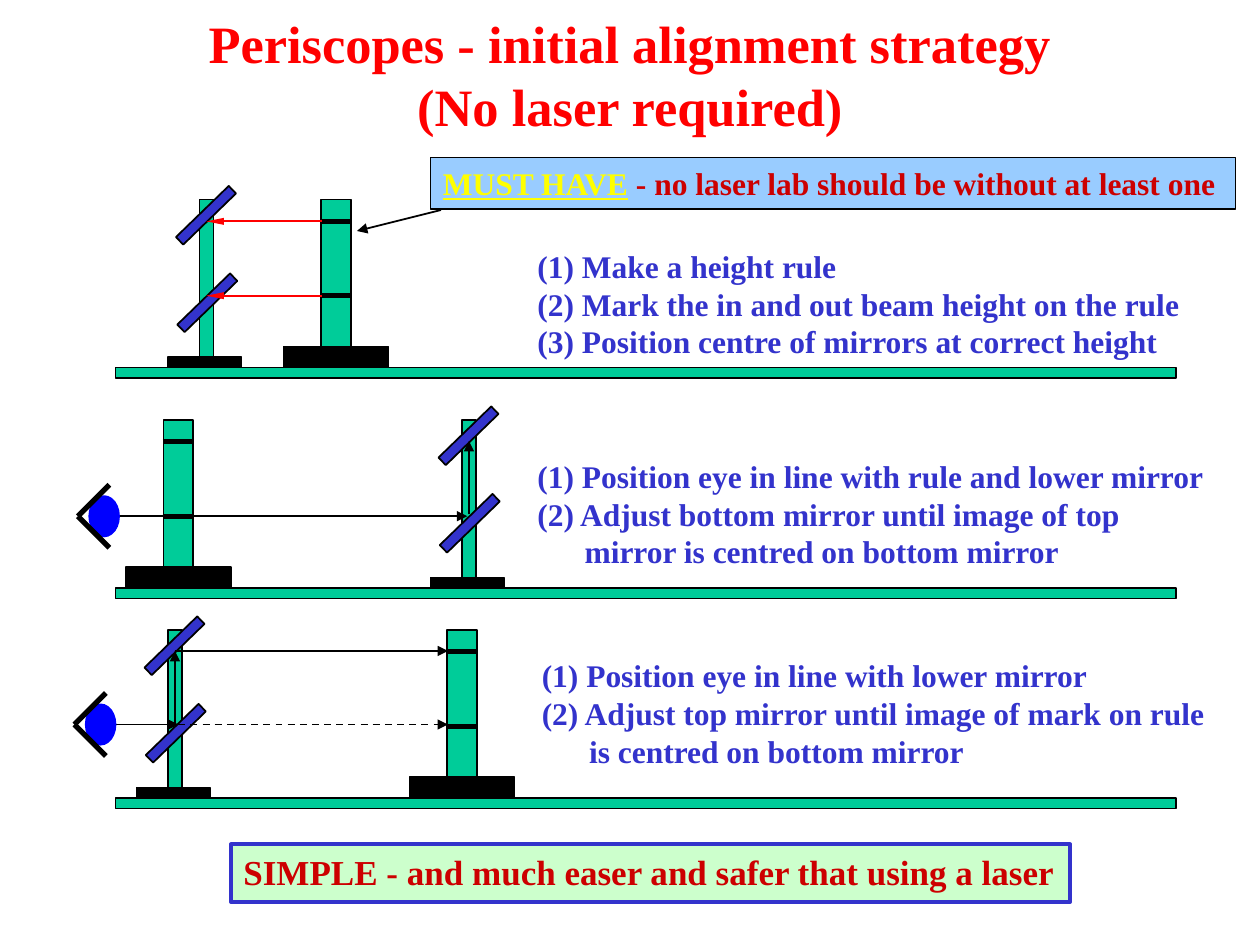
from dataclasses import dataclass

from lxml import etree
from pptx import Presentation
from pptx.dml.color import RGBColor
from pptx.enum.dml import MSO_LINE
from pptx.enum.shapes import MSO_CONNECTOR, MSO_SHAPE
from pptx.enum.text import MSO_ANCHOR, PP_ALIGN
from pptx.oxml.ns import qn
from pptx.util import Pt

RECT, OVAL = MSO_SHAPE.RECTANGLE, MSO_SHAPE.OVAL
LINE, DASH = MSO_CONNECTOR.STRAIGHT, MSO_LINE.DASH
LEFT, CENTER = PP_ALIGN.LEFT, PP_ALIGN.CENTER
TOP, MIDDLE = MSO_ANCHOR.TOP, MSO_ANCHOR.MIDDLE


@dataclass(frozen=True)
class Theme:
    font: str = "Times New Roman"
    black: str = "000000"
    red: str = "FF0000"
    dark: str = "CC0000"
    blue: str = "3333CC"
    eye: str = "0000FF"
    green: str = "00CC99"
    pale: str = "CCFFCC"
    sky: str = "99CCFF"
    yellow: str = "FFFF00"
    title: int = 30
    body: int = 18
    close: int = 20


class Sketch:
    UPPER, LOWER = 83.5, 41  # beam heights over the rail top

    def __init__(self, slide, theme):
        self.slide, self.theme = slide, theme

    def block(self, x, y, w, h, fill, line=None, weight=1, kind=RECT, turn=0, place=None):
        place = place or self.slide
        shape = place.shapes.add_shape(kind, Pt(x), Pt(y), Pt(w), Pt(h))
        shape.shadow.inherit = False
        shape.rotation = turn
        shape.fill.solid()
        shape.fill.fore_color.rgb = RGBColor.from_string(fill)
        if line:
            shape.line.color.rgb = RGBColor.from_string(line)
            shape.line.width = Pt(weight)
        else:
            shape.line.fill.background()
        return shape

    def stroke(self, x1, y1, x2, y2, color=None, weight=1, head=None, dash=None, place=None):
        """Draw a line; head holds the arrowhead's width and length."""
        place = place or self.slide
        line = place.shapes.add_connector(LINE, Pt(x1), Pt(y1), Pt(x2), Pt(y2))
        line.line.color.rgb = RGBColor.from_string(color or self.theme.black)
        line.line.width = Pt(weight)
        if dash:
            line.line.dash_style = dash
        props = line._element.spPr
        if head:
            etree.SubElement(props.find(qn("a:ln")), qn("a:tailEnd"),
                             type="triangle", w=head[0], len=head[1])
        etree.SubElement(props, qn("a:effectLst"))

    def ray(self, x1, y1, x2, y2, color=None, head=("med", "med"), dash=None):
        self.stroke(x1, y1, x2, y2, color, head=head, dash=dash)

    def letter(self, shape, lines, size, align=LEFT, anchor=TOP, wrap=False):
        """Fill a shape with lines, each an indent and a list of (text, color, underline)."""
        frame = shape.text_frame
        for name, value in {"word_wrap": wrap, "vertical_anchor": anchor}.items():
            setattr(frame, name, value)
        for i, (indent, runs) in enumerate(lines):
            para = frame.add_paragraph() if i else frame.paragraphs[0]
            para.alignment = align
            if indent:
                para._p.get_or_add_pPr().set("marL", str(int(Pt(indent))))
            for text, color, under in runs:
                run = para.add_run()
                run.text = text
                form = {"name": self.theme.font, "size": Pt(size), "bold": True, "underline": under}
                for name, value in form.items():
                    setattr(run.font, name, value)
                run.font.color.rgb = RGBColor.from_string(color)

    def label(self, x, y, w, h, lines, color, size, **form):
        box = self.slide.shapes.add_textbox(Pt(x), Pt(y), Pt(w), Pt(h))
        rows = [(indent, [(text, color, False)]) for indent, text in lines]
        self.letter(box, rows, size, **form)

    def steps(self, x, y, lines):
        self.label(x, y, 410, 72, lines, self.theme.blue, self.theme.body, wrap=True)

    def rail(self, y):
        self.block(66, y, 606, 6, self.theme.green, self.theme.black)

    def tower(self, x, rail):
        """Draw the post that carries both mirrors."""
        t = self.theme
        self.block(x + 18, rail - 96, 8, 90, t.green, t.black)
        for dx, rise in ((1.5, 40), (0.75, 90)):
            self.block(x + dx, rail - rise, 42, 6, t.blue, t.black, turn=315.9)
        self.block(x, rail - 6, 42, 6, t.black, t.black)

    def ruler(self, x, rail):
        t = self.theme
        self.block(x + 21.5, rail - 96, 17, 84, t.green, t.black)
        self.block(x, rail - 12, 60, 12, t.black, t.black)
        for rise in (self.UPPER, self.LOWER):
            self.stroke(x + 21, rail - rise, x + 39, rail - rise, weight=3)

    def eye(self, x, y):
        """Draw an eye whose lids meet at (x, y)."""
        group = self.slide.shapes.add_group_shape()
        self.block(x + 6, y - 12, 18, 24, self.theme.eye, kind=OVAL, place=group)
        for dy in (-18, 18):
            self.stroke(x, y, x + 18, y + dy, weight=3, place=group)


def main():
    deck = Presentation()
    deck.slide_width, deck.slide_height = Pt(720), Pt(540)
    t = Theme()
    s = Sketch(deck.slides.add_slide(deck.slide_layouts[6]), t)
    up, low = s.UPPER, s.LOWER

    s.label(0, 12, 720, 60, [(0, "Periscopes - initial alignment strategy"), (0, "(No laser required)")],
            t.red, t.title, align=CENTER, anchor=MIDDLE, wrap=True)

    # Rail top, mirror tower and ruler of each stage
    stages = ((210, 96, 162), (336, 246, 72), (456, 78, 234))
    for rail, tower, ruler in stages:
        s.rail(rail)
        s.tower(tower, rail)
        s.ruler(ruler, rail)
    first, second, third = (stage[0] for stage in stages)

    # Stage 1: set the mirror heights
    for rise in (up, low):
        s.ray(184, first - rise, 118, first - rise, t.red, ("sm", "lg"))
    s.steps(300, 137.5, [(0, "(1) Make a height rule"),
                         (0, "(2) Mark the in and out beam height on the rule"),
                         (0, "(3) Position centre of mirrors at correct height")])
    s.ray(252, 120, 204, 132)
    note = s.block(246, 90, 460, 29.5, t.sky, t.black, 0.75)
    s.letter(note, [(0, [("MUST HAVE", t.yellow, True),
                         (" - no laser lab should be without at least one", t.dark, False)])], t.body)

    # Stage 2: set the bottom mirror
    s.ray(62, second - low, 267, second - low)
    s.ray(268, second - 42, 268, second - 84)
    s.eye(44.5, second - low)
    s.steps(300, 257.5, [(0, "(1) Position eye in line with rule and lower mirror"),
                         (0, "(2) Adjust bottom mirror until image of top"),
                         (27, "mirror is centred on bottom mirror")])

    # Stage 3: set the top mirror
    s.ray(66, third - 42, 102, third - 42)
    s.ray(100, third - 42, 100, third - 84)
    s.ray(100, third - 84, 256, third - 84)
    s.ray(88, third - 42, 256, third - 42, dash=DASH)
    s.eye(42.5, third - 42)
    s.steps(302.5, 371.5, [(0, "(1) Position eye in line with lower mirror"),
                           (0, "(2) Adjust top mirror until image of mark on rule"),
                           (27, "is centred on bottom mirror")])

    close = s.block(132, 482.5, 479.5, 33, t.pale, t.blue, 2.25)
    s.letter(close, [(0, [("SIMPLE - and much easer and safer that using a laser", t.dark, False)])], t.close)
    deck.save("out.pptx")


if __name__ == "__main__":
    main()
